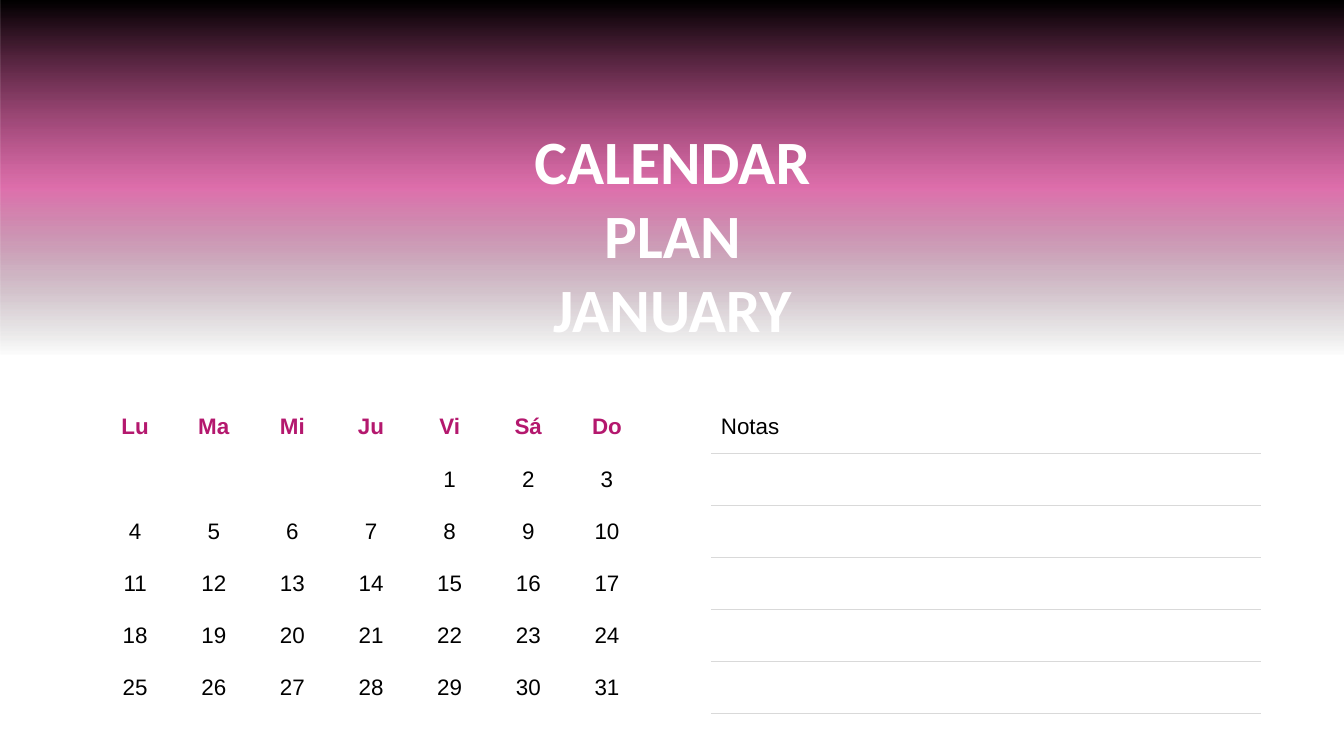
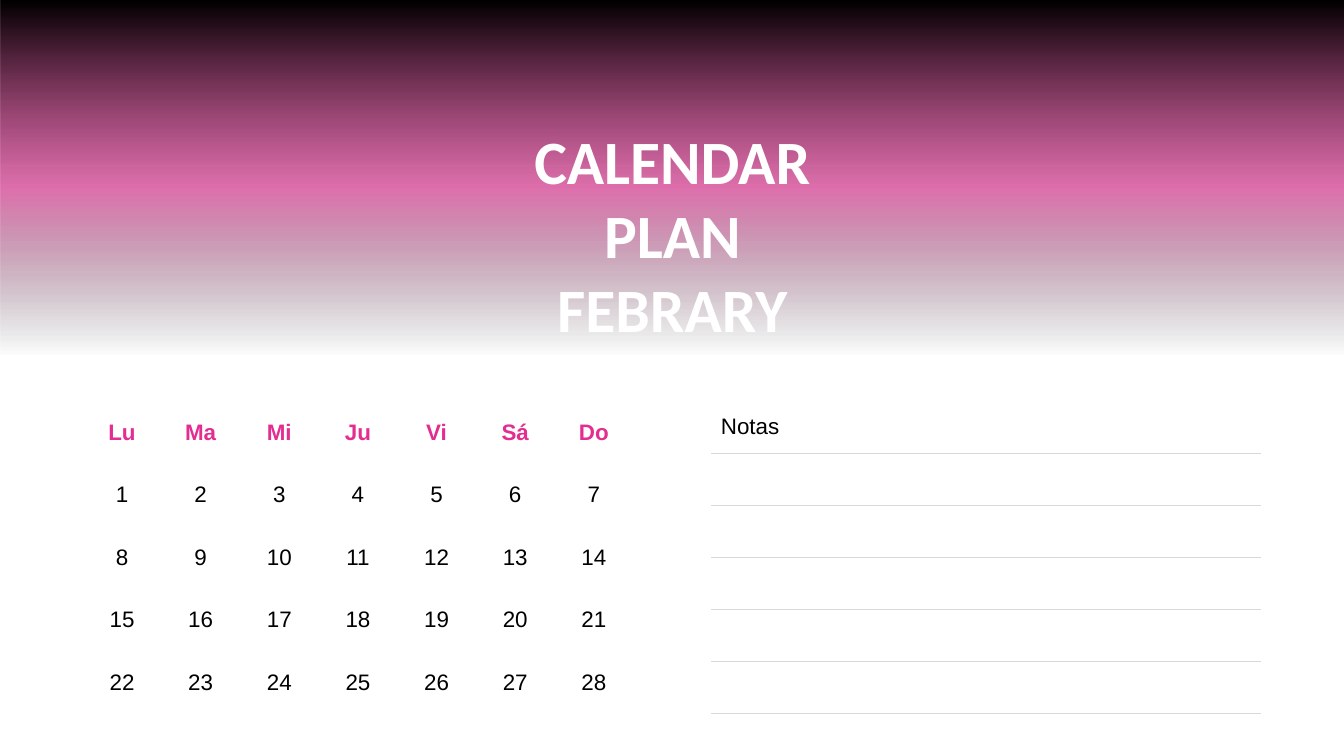
"""Builds a two-month calendar plan with a notes table beside each month."""
from dataclasses import dataclass
from math import ceil

from pptx import Presentation
from pptx.dml.color import RGBColor
from pptx.enum.shapes import MSO_SHAPE
from pptx.enum.text import MSO_ANCHOR, MSO_AUTO_SIZE, PP_ALIGN
from pptx.oxml import parse_xml
from pptx.oxml.ns import nsdecls, qn
from pptx.util import Inches, Pt


@dataclass(frozen=True)
class Theme:
    ink: str = "000000"
    white: str = "FFFFFF"
    glow: str = "CB1A7B"
    rule: str = "D9D9D9"
    head: str = "Calibri"
    body: str = "Arial"
    big: int = 44
    small: int = 16
    plain: str = "{2D5ABB26-0587-4C30-8999-92F81FD0307C}"


theme = Theme()
days = ["Lu", "Ma", "Mi", "Ju", "Vi", "Sá", "Do"]
months = [
    ("JANUARY", 4, 31, 0.95, "B4186E"),
    ("FEBRARY", 0, 28, 0.82, "E32D91"),
]
stops = [(0, theme.ink, 100), (53, theme.glow, 62), (100, theme.ink, 0)]


def style(para, face, size, color, bold=False, align=PP_ALIGN.CENTER):
    para.alignment = align
    para.font.name = face
    para.font.size = Pt(size)
    para.font.bold = bold
    para.font.color.rgb = RGBColor.from_string(color)


def grid(slide, left, rows, widths):
    frame = slide.shapes.add_table(
        rows, len(widths), Inches(left), Inches(3.98), Inches(5.46), Inches(3.1))
    table = frame.table
    table.first_row = table.horz_banding = False
    table._tbl.tblPr.find(qn("a:tableStyleId")).text = theme.plain
    for col, width in zip(table.columns, widths):
        col.width = Inches(width)
    for row in table.rows:
        row.height = Inches(3.1 / rows)
    for cell in table.iter_cells():
        cell.fill.background()
        cell.vertical_anchor = MSO_ANCHOR.MIDDLE
    return table


deck = Presentation()
deck.slide_width, deck.slide_height = Inches(13.33), Inches(7.5)

for month, start, count, left, accent in months:
    slide = deck.slides.add_slide(deck.slide_layouts[6])

    weeks = ceil((start + count) / 7)
    dates = grid(slide, left, weeks + 1, [0.78] * 7)
    labels = days + [""] * start + [str(n + 1) for n in range(count)]
    for i, label in enumerate(labels):
        if label:
            cell = dates.cell(i // 7, i % 7)
            cell.text = label
            top = i < 7
            style(cell.text_frame.paragraphs[0], theme.body, theme.small,
                  accent if top else theme.ink, top)

    notes = grid(slide, 7.05, 6, [1.9] + [0.89] * 4)
    for cell in notes.iter_cells():
        cell._tc.tcPr.insert(0, parse_xml(
            f'<a:lnB {nsdecls("a")} w="12700"><a:solidFill>'
            f'<a:srgbClr val="{theme.rule}"/></a:solidFill></a:lnB>'))
    first = notes.cell(0, 0)
    first.text = "Notas"
    style(first.text_frame.paragraphs[0], theme.body, theme.small, theme.ink,
          align=PP_ALIGN.LEFT)

    band = slide.shapes.add_shape(
        MSO_SHAPE.RECTANGLE, 0, 0, deck.slide_width, Inches(3.52))
    band.rotation = 180
    marks = "".join(
        f'<a:gs pos="{at * 1000}"><a:srgbClr val="{color}">'
        f'<a:alpha val="{alpha * 1000}"/></a:srgbClr></a:gs>'
        for at, color, alpha in stops)
    band._element.spPr.append(parse_xml(
        f'<a:gradFill {nsdecls("a")} rotWithShape="1"><a:gsLst>{marks}</a:gsLst>'
        '<a:lin ang="16200000" scaled="0"/></a:gradFill>'))
    band.line.fill.background()
    band.shadow.inherit = False

    title = slide.shapes.add_textbox(
        Inches(4.54), Inches(1.17), Inches(4.26), Inches(1.58))
    text = title.text_frame
    text.word_wrap = True
    text.auto_size = MSO_AUTO_SIZE.SHAPE_TO_FIT_TEXT
    text.text = f"CALENDAR PLAN\n{month}"
    for para in text.paragraphs:
        style(para, theme.head, theme.big, theme.white, True)

deck.save("out.pptx")
